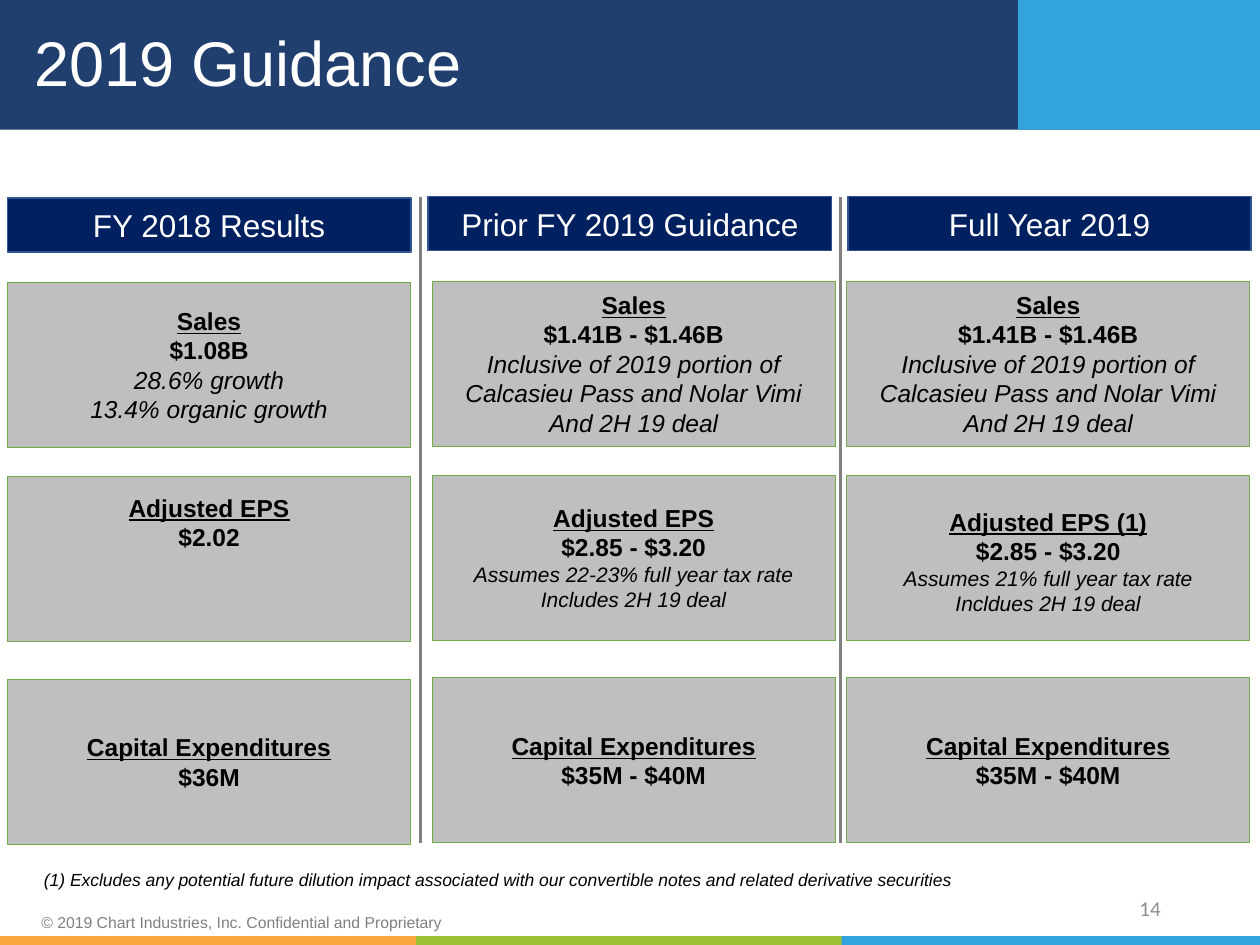
import pptx
import pptx.util
import pptx.dml.color
import pptx.enum.shapes
import pptx.enum.text
import pptx.oxml.ns
import lxml.etree

Inches, Pt = pptx.util.Inches, pptx.util.Pt
RGBColor = pptx.dml.color.RGBColor
Align = pptx.enum.text.PP_ALIGN
Anchor = pptx.enum.text.MSO_ANCHOR

NAVY = RGBColor(0x20, 0x3F, 0x6E)
SKY = RGBColor(0x33, 0xA3, 0xDD)
ORANGE = RGBColor(0xF9, 0xA6, 0x3F)
LIME = RGBColor(0x9D, 0xC3, 0x35)
HEADER_FILL = RGBColor(0x00, 0x20, 0x60)
HEADER_LINE = RGBColor(0x32, 0x54, 0x91)
BOX_FILL = RGBColor(0xBF, 0xBF, 0xBF)
BOX_LINE = RGBColor(0x70, 0xAD, 0x47)
GRAY = RGBColor(0x80, 0x80, 0x80)
NUMBER_GRAY = RGBColor(0x8C, 0x8C, 0x8C)
WHITE = RGBColor(0xFF, 0xFF, 0xFF)
BLACK = RGBColor(0, 0, 0)

# Content
TITLE = "2019 Guidance"
SALES_GUIDANCE = ("Sales", "$1.41B - $1.46B",
                  ["Inclusive of 2019 portion of Calcasieu Pass and Nolar Vimi",
                   "And 2H 19 deal"])
CAPITAL_GUIDANCE = ("Capital Expenditures", "$35M - $40M", [])
COLUMNS = [
    ("FY 2018 Results", [
        ("Sales", "$1.08B", ["28.6% growth", "13.4% organic growth"]),
        ("Adjusted EPS", "$2.02", []),
        ("Capital Expenditures", "$36M", [])]),
    ("Prior FY 2019 Guidance", [
        SALES_GUIDANCE,
        ("Adjusted EPS", "$2.85 - $3.20",
         ["Assumes 22-23% full year tax rate", "Includes 2H 19 deal"]),
        CAPITAL_GUIDANCE]),
    ("Full Year 2019", [
        SALES_GUIDANCE,
        ("Adjusted EPS (1)", "$2.85 - $3.20",
         ["Assumes 21% full year tax rate", "Incldues 2H 19 deal"]),
        CAPITAL_GUIDANCE]),
]
FOOTNOTE = ("(1) Excludes any potential future dilution impact associated with our "
            "convertible notes and related derivative securities")
COPYRIGHT = "© 2019 Chart Industries, Inc. Confidential and Proprietary"
PAGE_NUMBER = "14"

# Grid, in inches
SLIDE_WIDTH, SLIDE_HEIGHT = 10, 7.5
BAND_HEIGHT = 1.03
HEADER_LEFTS = (0.06, 3.4, 6.73)
BOX_LEFTS = (0.06, 3.43, 6.72)
COLUMN_DROPS = (0.01, 0, 0)
COLUMN_WIDTH = 3.2
HEADER_TOP, HEADER_HEIGHT = 1.56, 0.43
ROW_TOPS, ROW_HEIGHT = (2.23, 3.77, 5.38), 1.31
NOTE_SIZES = (14, 12, 14)
DIVIDERS = (3.34, 6.67)
# Vertical shift of the text in a cell, by (column, row)
TEXT_SHIFTS = {(0, 1): -0.29, (2, 1): 0.03}

presentation = pptx.Presentation()
presentation.slide_width = Inches(SLIDE_WIDTH)
presentation.slide_height = Inches(SLIDE_HEIGHT)
slide = presentation.slides.add_slide(presentation.slide_layouts[5])


def write(frame, text, size=14, color=BLACK, font="Arial", bold=False, italic=False,
          underline=False, align=Align.CENTER, anchor=Anchor.MIDDLE):
    """Add one paragraph to a text frame, filling an empty first one."""
    frame.word_wrap = True
    frame.vertical_anchor = anchor
    paragraph = frame.paragraphs[0]
    if paragraph.runs:
        paragraph = frame.add_paragraph()
    paragraph.alignment = align
    run = paragraph.add_run()
    run.text = text
    run.font.name, run.font.size = font, Pt(size)
    run.font.bold, run.font.italic, run.font.underline = bold, italic, underline
    run.font.color.rgb = color
    return paragraph


def add_rectangle(left, top, width, height, fill, line=None, line_width=1):
    shape = slide.shapes.add_shape(
        pptx.enum.shapes.MSO_SHAPE.RECTANGLE,
        Inches(left), Inches(top), Inches(width), Inches(height))
    shape.shadow.inherit = False
    shape.fill.solid()
    shape.fill.fore_color.rgb = fill
    if line is None:
        shape.line.fill.background()
    else:
        shape.line.color.rgb = line
        shape.line.width = Pt(line_width)
    return shape


def add_text(left, top, width, height, text, **text_format):
    box = slide.shapes.add_textbox(Inches(left), Inches(top), Inches(width), Inches(height))
    write(box.text_frame, text, **text_format)
    return box


# Title band and bottom stripe
add_rectangle(-0.01, 0, SLIDE_WIDTH + 0.02, BAND_HEIGHT, NAVY)
add_rectangle(8.08, -0.01, 1.93, BAND_HEIGHT + 0.01, SKY)
for left, color in ((6.67, SKY), (-0.04, ORANGE), (3.3, LIME)):
    add_rectangle(left, 7.43, min(3.38, SLIDE_WIDTH + 0.01 - left), 0.08, color)

# Title, brought in front of its band
title = slide.shapes.title
title.left, title.top = Inches(0.17), Inches(0.09)
title.width, title.height = Inches(7.83), Inches(0.87)
write(title.text_frame, TITLE, size=36, color=WHITE, align=Align.LEFT).line_spacing = 0.9
slide.shapes._spTree.append(title._element)

# Columns of results and guidance
for column, (heading, cells) in enumerate(COLUMNS):
    drop = COLUMN_DROPS[column]
    header = add_rectangle(HEADER_LEFTS[column], HEADER_TOP + drop, COLUMN_WIDTH,
                           HEADER_HEIGHT, HEADER_FILL, HEADER_LINE)
    write(header.text_frame, heading, size=18, color=WHITE)
    for row, (measure, value, notes) in enumerate(cells):
        box = add_rectangle(BOX_LEFTS[column], ROW_TOPS[row] + drop, COLUMN_WIDTH,
                            ROW_HEIGHT, BOX_FILL, BOX_LINE, 0.5)
        frame = box.text_frame
        shift = TEXT_SHIFTS.get((column, row), 0)
        frame.margin_top = Inches(0.05 + 2 * max(shift, 0))
        frame.margin_bottom = Inches(0.05 + 2 * max(-shift, 0))
        write(frame, measure, bold=True, underline=True)
        write(frame, value, bold=True)
        for note in notes:
            write(frame, note, size=NOTE_SIZES[row], italic=True)

# Dividers between the columns
for x in DIVIDERS:
    divider = slide.shapes.add_connector(
        pptx.enum.shapes.MSO_CONNECTOR.STRAIGHT,
        Inches(x), Inches(HEADER_TOP), Inches(x), Inches(ROW_TOPS[-1] + ROW_HEIGHT))
    divider.line.color.rgb = GRAY
    divider.line.width = Pt(1.5)
    lxml.etree.SubElement(divider._element.spPr, pptx.oxml.ns.qn("a:effectLst"))

# Footnote, copyright and page number
add_text(0.25, 6.85, 8.66, 0.27, FOOTNOTE, size=10, italic=True,
         align=Align.LEFT, anchor=Anchor.TOP)
copyright_box = add_text(0.23, 7.23, 3.47, 0.18, COPYRIGHT, size=9, color=GRAY,
                         align=Align.LEFT)
copyright_box.text_frame.margin_top = copyright_box.text_frame.margin_bottom = Inches(0.02)
add_text(7.06, 7.01, 2.25, 0.4, PAGE_NUMBER, size=12, color=NUMBER_GRAY,
         font="Calibri", align=Align.RIGHT)

presentation.save("out.pptx")
